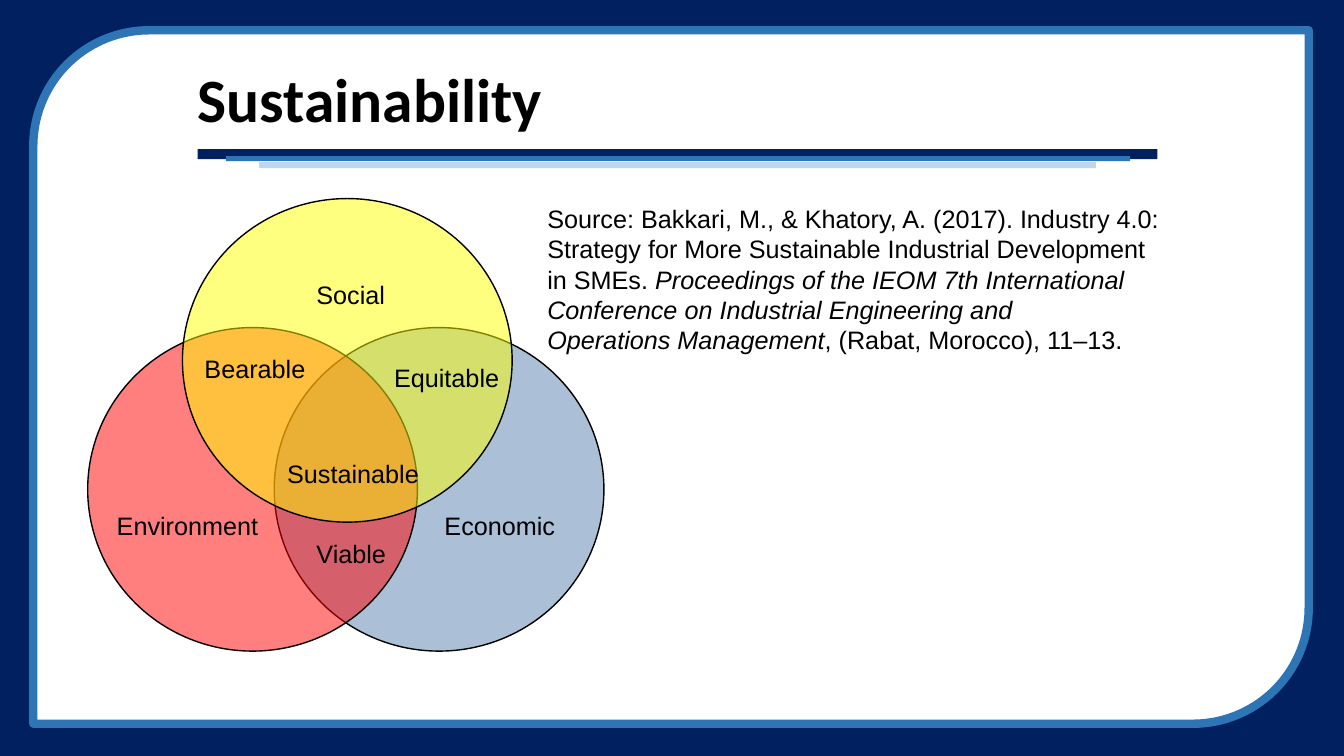
"""Build the Sustainability slide: a three-circle Venn diagram with its source."""
import pptx
import pptx.dml.color
import pptx.enum.shapes
import pptx.enum.text
import pptx.oxml.ns
import pptx.util
from lxml import etree
from pptx.dml.color import RGBColor
from pptx.util import Inches

NAVY = RGBColor(0x00, 0x20, 0x60)
BLUE = RGBColor(0x2E, 0x75, 0xB6)
PALE_BLUE = RGBColor(0xBD, 0xD7, 0xEE)
STEEL = RGBColor(0x59, 0x83, 0xB0)
RED = RGBColor(0xFF, 0x00, 0x00)
YELLOW = RGBColor(0xFF, 0xFF, 0x00)
WHITE = RGBColor(0xFF, 0xFF, 0xFF)
BLACK = RGBColor(0x00, 0x00, 0x00)
SHAPES = pptx.enum.shapes.MSO_SHAPE

presentation = pptx.Presentation()
presentation.slide_width = Inches(13.33)
presentation.slide_height = Inches(7.5)
slide = presentation.slides.add_slide(presentation.slide_layouts[6])


def add_filled_shape(kind, left, top, width, height, fill, line=None, line_width=1):
    shape = slide.shapes.add_shape(
        kind, Inches(left), Inches(top), Inches(width), Inches(height))
    shape.shadow.inherit = False
    shape.fill.solid()
    shape.fill.fore_color.rgb = fill
    if line is None:
        shape.line.fill.background()
    else:
        shape.line.color.rgb = line
        shape.line.width = pptx.util.Pt(line_width)
    return shape


def add_text_box(left, top, width, height, lines, size=18, font_name="Arial"):
    text_box = slide.shapes.add_textbox(
        Inches(left), Inches(top), Inches(width), Inches(height))
    text_frame = text_box.text_frame
    text_frame.word_wrap = True
    for index, runs in enumerate(lines):
        paragraph = text_frame.paragraphs[0] if index == 0 else text_frame.add_paragraph()
        paragraph.font.name = font_name
        paragraph.font.size = pptx.util.Pt(size)
        paragraph.font.color.rgb = BLACK
        for text, italic in runs:
            run = paragraph.add_run()
            run.text = text
            if italic:
                run.font.italic = True
    return text_frame


add_filled_shape(SHAPES.RECTANGLE, 0, 0, 13.33, 7.5, NAVY)
frame = add_filled_shape(
    SHAPES.ROUND_2_DIAG_RECTANGLE, 0.33, 0.3, 12.65, 6.88, WHITE, BLUE, 6)
frame.adjustments[0] = 0.167
frame.rotation = 180

for left, top, width, height, color in [
    (1.96, 1.48, 9.52, 0.1, NAVY),
    (2.24, 1.55, 8.97, 0.05, BLUE),
    (2.57, 1.61, 8.3, 0.06, PALE_BLUE),
]:
    add_filled_shape(SHAPES.RECTANGLE, left, top, width, height, color)

title = add_text_box(1.96, 0.49, 9.52, 0.97, [[("Sustainability", False)]], 44, "Calibri")
title.margin_left = title.margin_top = title.margin_right = title.margin_bottom = 0
title.vertical_anchor = pptx.enum.text.MSO_ANCHOR.MIDDLE
title.paragraphs[0].font.bold = True

for left, top, color in [(2.72, 3.25, STEEL), (0.87, 3.25, RED), (1.81, 1.97, YELLOW)]:
    circle = add_filled_shape(SHAPES.OVAL, left, top, 3.27, 3.21, color, BLACK)
    fill_color = circle.fill._xPr.find(".//" + pptx.oxml.ns.qn("a:srgbClr"))
    etree.SubElement(fill_color, pptx.oxml.ns.qn("a:alpha"), val="50000")

for label, left, top, width, height in [
    ("Social", 3.04, 2.72, 0.94, 0.36),
    ("Environment", 1.06, 5.01, 1.66, 0.38),
    ("Economic", 4.31, 5.01, 1.35, 0.38),
    ("Bearable", 1.93, 3.46, 1.24, 0.4),
    ("Equitable", 3.81, 3.54, 1.29, 0.38),
    ("Viable", 3.04, 5.29, 0.93, 0.38),
    ("Sustainable", 2.75, 4.5, 1.57, 0.36),
]:
    add_text_box(left, top, width, height, [[(label, False)]])

add_text_box(5.33, 1.97, 6.33, 1.5, [
    [("Source: Bakkari, M., & Khatory, A. (2017). Industry 4.0:", False)],
    [("Strategy for More Sustainable Industrial Development", False)],
    [("in SMEs. ", False), ("Proceedings of the IEOM 7th International", True)],
    [("Conference on Industrial Engineering and", True)],
    [("Operations Management", True), (", (Rabat, Morocco), 11–13.", False)],
])

presentation.save("out.pptx")
